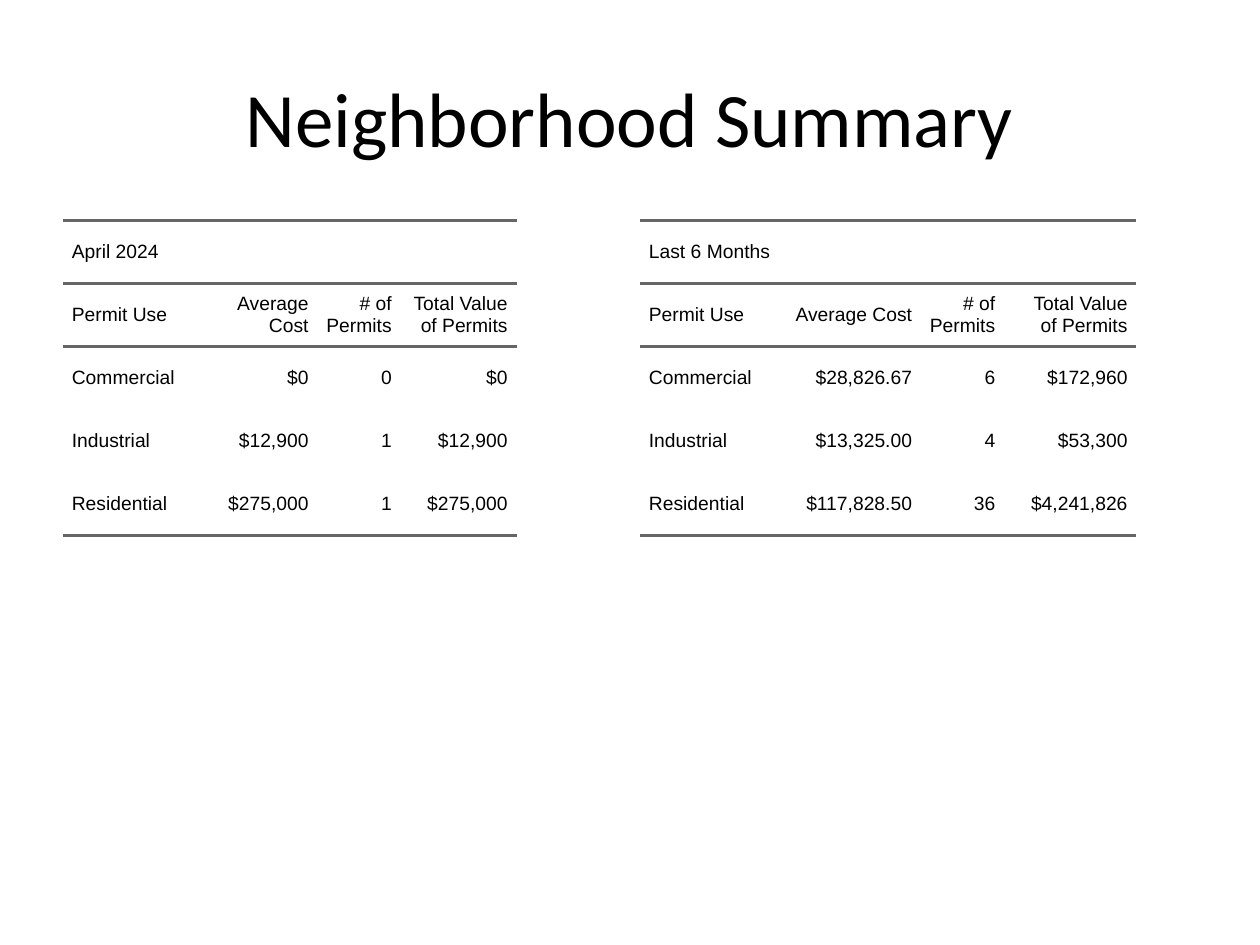
from lxml import etree
from pptx import Presentation
from pptx.dml.color import RGBColor
from pptx.enum.text import MSO_ANCHOR, PP_ALIGN
from pptx.oxml.ns import qn
from pptx.util import Inches, Pt

LEFT, CENTER, RIGHT = PP_ALIGN.LEFT, PP_ALIGN.CENTER, PP_ALIGN.RIGHT
MIDDLE = MSO_ANCHOR.MIDDLE
COLORS = {"text": "000000", "rule": "666666"}
PLAIN_TABLE_STYLE = "{2D5ABB26-0587-4C30-8999-92F81FD0307C}"
CELL_PAD = Inches(0.07)
ROW_HEIGHT = Inches(0.5)

HEADINGS = ["Permit Use", "Average Cost", "# of Permits", "Total Value of Permits"]
APRIL = [
    ["Commercial", "$0", "0", "$0"],
    ["Industrial", "$12,900", "1", "$12,900"],
    ["Residential", "$275,000", "1", "$275,000"],
]
SIX_MONTHS = [
    ["Commercial", "$28,826.67", "6", "$172,960"],
    ["Industrial", "$13,325.00", "4", "$53,300"],
    ["Residential", "$117,828.50", "36", "$4,241,826"],
]


def write_text(para, text, *, size, font, align=LEFT, color="text"):
    """Put one formatted span into a paragraph."""
    para.alignment = align
    span = para.add_run()
    span.text = text
    span.font.size = Pt(size)
    span.font.name = font
    span.font.color.rgb = RGBColor.from_string(COLORS[color])


def add_rules(cell, *sides):
    """Draw a rule on the given sides; borders precede the fill in the XML."""
    properties = cell._tc.get_or_add_tcPr()
    for position, side in enumerate(sides):
        line = etree.Element(qn(f"a:ln{side}"), w=str(Pt(1.5)))
        fill = etree.SubElement(line, qn("a:solidFill"))
        etree.SubElement(fill, qn("a:srgbClr"), val=COLORS["rule"])
        properties.insert(position, line)


def fill_cell(cell, text, align):
    cell.vertical_anchor = MIDDLE
    cell.margin_left = cell.margin_right = 0
    cell.margin_top = cell.margin_bottom = CELL_PAD
    para = cell.text_frame.paragraphs[0]
    para.space_before = para.space_after = Pt(5)
    indents = para._p.get_or_add_pPr()
    indents.set("marL", str(CELL_PAD))
    indents.set("marR", str(CELL_PAD))
    write_text(para, text, size=11, font="Arial", align=align)


def add_title(slide, box, text):
    frame = slide.shapes.add_textbox(*box).text_frame
    frame.word_wrap = True
    frame.vertical_anchor = MIDDLE
    write_text(frame.paragraphs[0], text, size=44, font="Calibri", align=CENTER)


def add_permit_table(slide, box, period, records, widths):
    rows = [[period, "", "", ""], HEADINGS, *records]
    frame = slide.shapes.add_table(len(rows), len(HEADINGS), *box)
    table = frame.table
    table.first_row = table.horz_banding = False
    table._tbl.tblPr.find(qn("a:tableStyleId")).text = PLAIN_TABLE_STYLE
    for column, width in zip(table.columns, widths):
        column.width = Inches(width)
    for row in table.rows:
        row.height = ROW_HEIGHT
    # The frame keeps the size of its box, whatever the grid takes up
    frame.width, frame.height = box[2:]

    table.cell(0, 0).merge(table.cell(0, len(HEADINGS) - 1))
    for r, texts in enumerate(rows):
        for c, text in enumerate(texts):
            cell = table.cell(r, c)
            cell.fill.background()
            if text:
                fill_cell(cell, text, RIGHT if c else LEFT)
            if r < 2:
                add_rules(cell, "T", "B")
            elif r == len(rows) - 1:
                add_rules(cell, "B")


def main():
    deck = Presentation()
    deck.slide_width, deck.slide_height = Inches(10), Inches(7.5)
    slide = deck.slides.add_slide(deck.slide_layouts[6])

    # Two tables side by side
    top, width, height = Inches(1.75), Inches(4.42), Inches(4.95)
    add_permit_table(slide, (Inches(0.5), top, width, height),
                     "April 2024", APRIL, [1.1, 0.92, 0.66, 0.92])
    add_permit_table(slide, (Inches(5.08), top, width, height),
                     "Last 6 Months", SIX_MONTHS, [1.1, 1.13, 0.66, 1.05])

    # Title
    add_title(slide, (Inches(0.5), Inches(0.3), Inches(9), Inches(1.25)),
              "Neighborhood Summary")
    deck.save("out.pptx")


if __name__ == "__main__":
    main()
